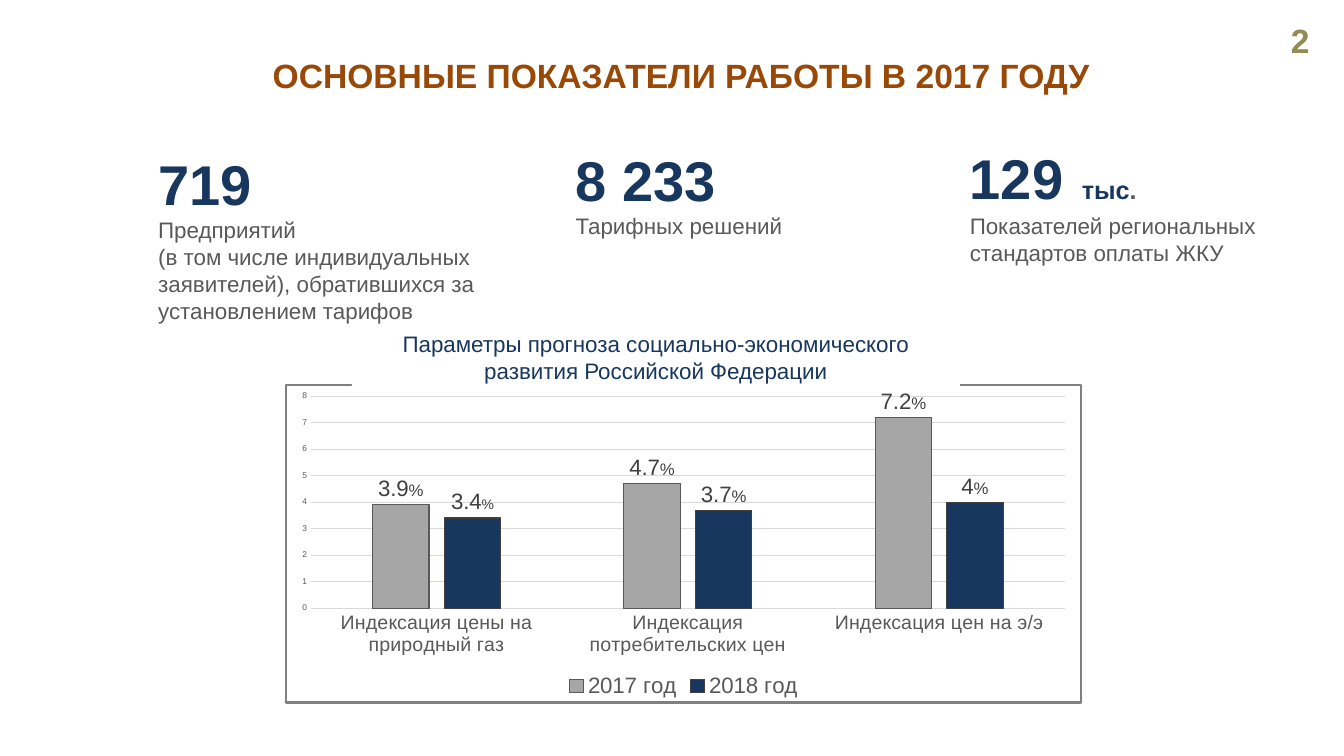
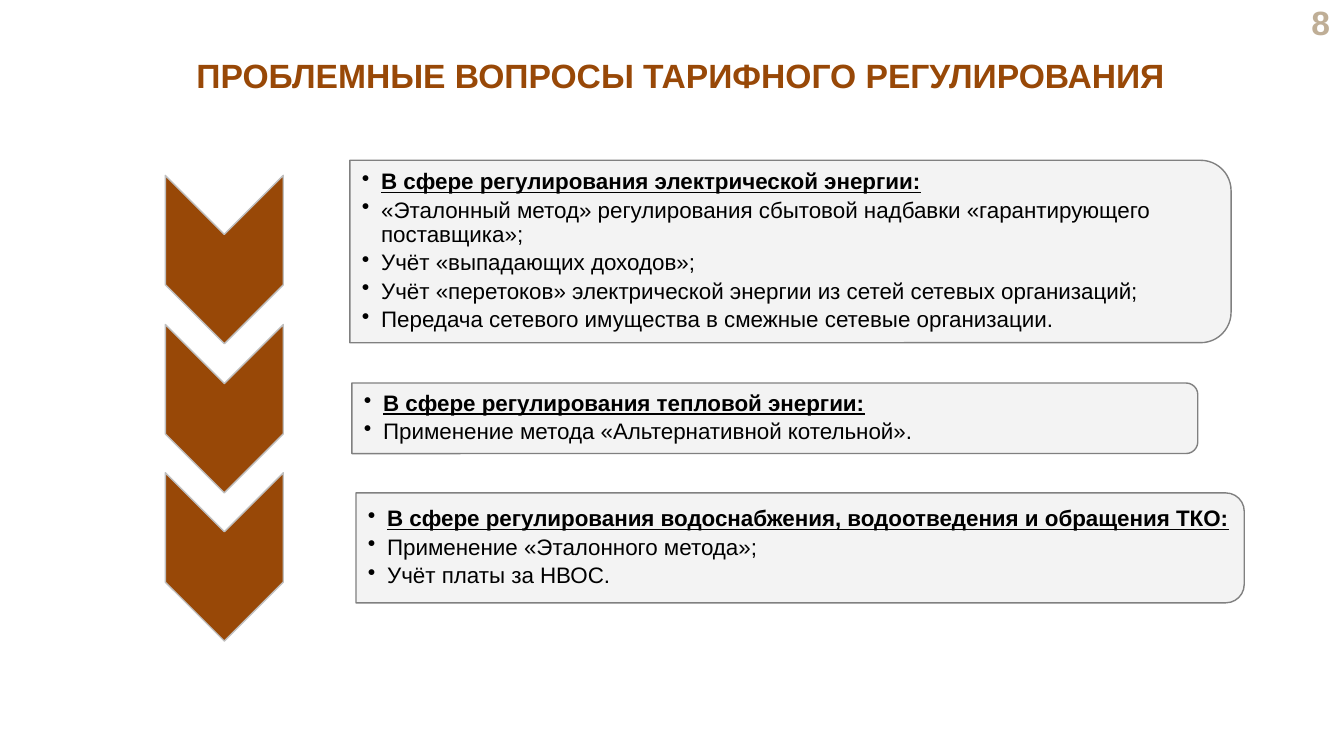
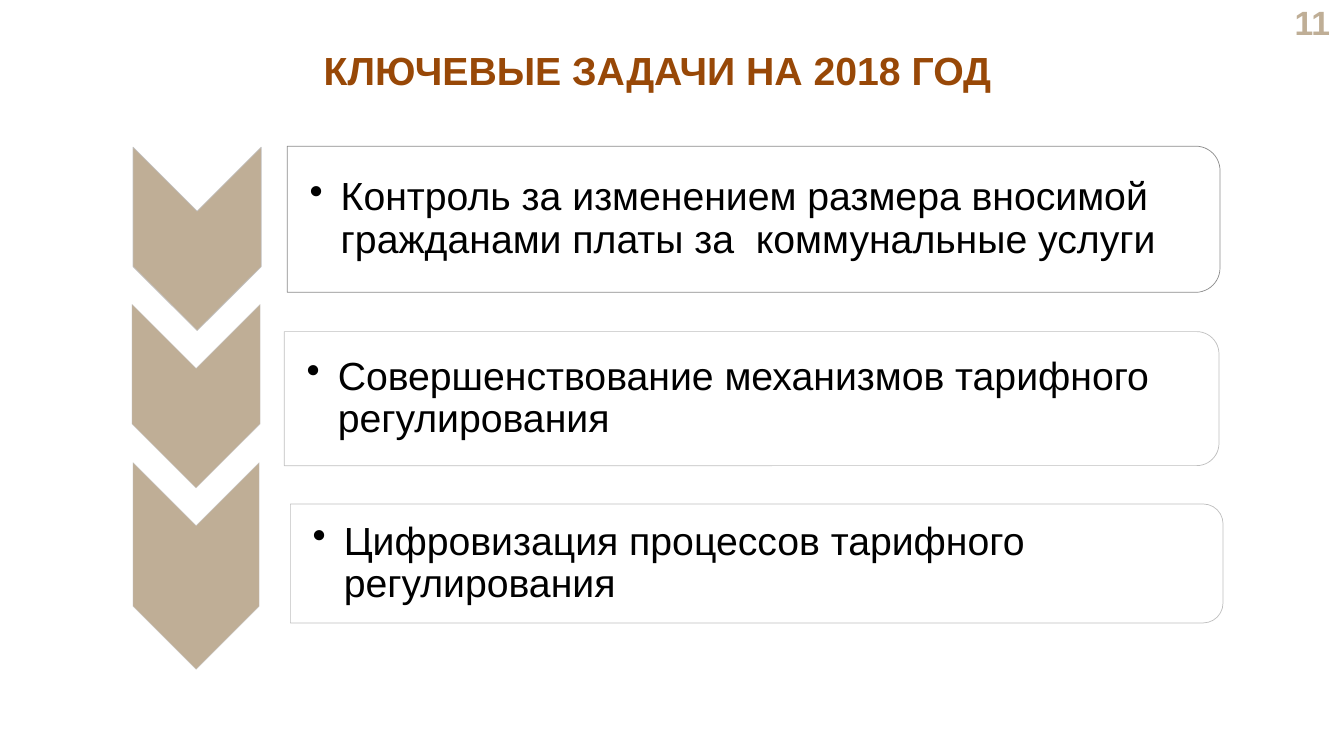
from pptx import Presentation
from pptx.chart.data import CategoryChartData
from pptx.dml.color import RGBColor
from pptx.enum.chart import XL_CHART_TYPE, XL_LABEL_POSITION, XL_LEGEND_POSITION, XL_TICK_MARK
from pptx.enum.shapes import MSO_SHAPE
from pptx.enum.text import MSO_ANCHOR, MSO_AUTO_SIZE, PP_ALIGN
from pptx.oxml import parse_xml
from pptx.oxml.ns import nsdecls, qn
from pptx.oxml.xmlchemy import OxmlElement
from pptx.util import Pt

PX = 9144  # 100 px to the inch
FONT = "Arial"
BROWN, SAND, OLIVE, NAVY = "984807", "BFAE96", "948A54", "17375E"
BLACK, WHITE, PALE = "000000", "FFFFFF", "F2F2F2"
DARK, TEXT_GREY, MID, SILVER, GRID = "404040", "595959", "808080", "BFBFBF", "D9D9D9"


def paint(fill, color, alpha=100):
    fill.solid()
    fill.fore_color.rgb = RGBColor.from_string(color)
    if alpha < 100:
        opacity = OxmlElement("a:alpha")
        opacity.set("val", str(alpha * 1000))
        fill._xPr.find(".//" + qn("a:srgbClr")).append(opacity)


def write(frame, paragraphs, size=16, color=BLACK, bold=False, underline=False,
          align=PP_ALIGN.LEFT, anchor=MSO_ANCHOR.TOP, insets=(10, 5, 10, 5), bullet=0):
    """Each paragraph is a list of (text, overrides of the text format)."""
    frame.word_wrap = True
    frame.auto_size = MSO_AUTO_SIZE.NONE
    frame.vertical_anchor = anchor
    frame.margin_left, frame.margin_top, frame.margin_right, frame.margin_bottom = (
        inset * PX for inset in insets)
    for index, runs in enumerate(paragraphs):
        paragraph = frame.add_paragraph() if index else frame.paragraphs[0]
        paragraph.alignment = align
        if bullet:
            properties = paragraph._p.get_or_add_pPr()
            properties.set("marL", str(bullet * PX))
            properties.set("indent", str(-bullet * PX))
            mark = OxmlElement("a:buChar")
            mark.set("char", "•")
            properties.append(mark)
            paragraph.line_spacing = 0.9
            paragraph.space_after = Pt(3)
        for text, override in runs:
            style = {"size": size, "color": color, "bold": bold, "underline": underline} | override
            run = paragraph.add_run()
            run.text = text
            run.font.name = FONT
            run.font.size = Pt(style["size"])
            run.font.bold = style["bold"]
            run.font.underline = style["underline"]
            paint(run.font.fill, style["color"])


deck = Presentation()
deck.slide_width, deck.slide_height = 1333 * PX, 750 * PX

# Titles
titles = [
    ("ОСНОВНЫЕ ПОКАЗАТЕЛИ РАБОТЫ В 2017 ГОДУ", (157, 49, 1037, 50), 24, PP_ALIGN.CENTER),
    ("ПРОБЛЕМНЫЕ ВОПРОСЫ ТАРИФНОГО РЕГУЛИРОВАНИЯ", (162, 49, 1026, 50), 24, PP_ALIGN.CENTER),
    ("КЛЮЧЕВЫЕ ЗАДАЧИ НА 2018 ГОД", (311, 41, 885, 57), 28, PP_ALIGN.LEFT),
]
for heading, box, size, align in titles:
    slide = deck.slides.add_slide(deck.slide_layouts[5])
    title = slide.shapes.title
    title.left, title.top, title.width, title.height = (v * PX for v in box)
    write(title.text_frame, [[(heading, {})]], size=size, color=BROWN, bold=True, align=align)
indicators, problems, tasks = deck.slides

# Page numbers
pages = [
    (indicators, "2", (1246, 15, 87, 50), OLIVE, PP_ALIGN.CENTER),
    (problems, "8", (1244, 5, 85, 34), SAND, PP_ALIGN.RIGHT),
    (tasks, "11", (1244, 5, 85, 34), SAND, PP_ALIGN.RIGHT),
]
for slide, number, box, color, align in pages:
    page = slide.shapes.add_textbox(*(v * PX for v in box))
    write(page.text_frame, [[(number, {})]], size=24, color=color, bold=True,
          align=align, anchor=MSO_ANCHOR.MIDDLE)

# Key figures
big = {"size": 40, "color": NAVY, "bold": True}
key_figures = [
    ((147, 143, 368, 185), [("719", big)],
     ["Предприятий",
      "(в том числе индивидуальных заявителей), обратившихся за установлением тарифов"]),
    ((561, 139, 304, 110), [("8 233", big)], ["Тарифных решений"]),
    ((952, 126, 308, 145),
     [("129", big), (" ", big | {"size": 48}), ("тыс", big | {"size": 18}),
      (".", {"size": 18, "bold": True})],
     ["Показателей региональных", "стандартов оплаты ЖКУ"]),
]
for box, figure, captions in key_figures:
    key_figure = indicators.shapes.add_textbox(*(v * PX for v in box))
    write(key_figure.text_frame, [figure] + [[(caption, {})] for caption in captions],
          color=TEXT_GREY)

# Forecast chart
forecast = CategoryChartData()
forecast.categories = ["Индексация цены на природный газ", "Индексация потребительских цен",
                       "Индексация цен на э/э"]
forecast.add_series("2017 год", (3.9, 4.7, 7.2))
forecast.add_series("2018 год", (3.4, 3.7, 4))
chart = indicators.shapes.add_chart(XL_CHART_TYPE.COLUMN_CLUSTERED, 283 * PX, 381 * PX,
                                    790 * PX, 317 * PX, forecast).chart
chart.has_title = False
chart.font.name, chart.font.size = FONT, Pt(10)
chart._chartSpace.find(qn("c:txPr")).addprevious(parse_xml(
    f'<c:spPr {nsdecls("c", "a")}><a:noFill/><a:ln w="{Pt(1.5)}"><a:solidFill>'
    f'<a:srgbClr val="{MID}"/></a:solidFill></a:ln></c:spPr>'))

prices, percents = chart.category_axis, chart.value_axis
percents.minimum_scale, percents.maximum_scale, percents.major_unit = 0, 8, 1
percents.format.line.fill.background()
chart.has_legend = True
chart.legend.position = XL_LEGEND_POSITION.BOTTOM
chart.legend.include_in_layout = False
for font, size in ((prices.tick_labels.font, 14), (percents.tick_labels.font, 6),
                   (chart.legend.font, 16)):
    font.name, font.size = FONT, Pt(size)
    paint(font.fill, TEXT_GREY)
for axis in (prices, percents):
    axis.major_tick_mark = axis.minor_tick_mark = XL_TICK_MARK.NONE
for line in (prices.format.line, percents.major_gridlines.format.line):
    paint(line.fill, GRID)
    line.width = Pt(0.75)

plot = chart.plots[0]
plot.gap_width, plot.overlap, plot.vary_by_categories = 219, -27, False
year_styles = [("A6A6A6", TEXT_GREY, (12, 12, 12)), (NAVY, DARK, (10, 12, 12))]
for year, (fill, outline, sign_sizes) in zip(plot.series, year_styles):
    paint(year.format.fill, fill)
    paint(year.format.line.fill, outline)
    year.format.line.width = Pt(0.75)
    for index, (value, sign_size) in enumerate(zip(year.values, sign_sizes)):
        label = year.points[index].data_label
        write(label.text_frame, [[(f"{value:g}", {}), ("%", {"size": sign_size})]],
              color=DARK, align=PP_ALIGN.CENTER)
        label.position = XL_LABEL_POSITION.OUTSIDE_END

# Chart heading, interrupting the frame of the chart
chart_heading = indicators.shapes.add_shape(MSO_SHAPE.RECTANGLE, 349 * PX, 323 * PX,
                                            603 * PX, 64 * PX)
chart_heading.shadow.inherit = False
paint(chart_heading.fill, WHITE)
chart_heading.line.fill.background()
write(chart_heading.text_frame,
      [[("Параметры прогноза социально-экономического развития Российской Федерации", {})]],
      color=NAVY, align=PP_ALIGN.CENTER)

# Chevron lists: boxes as seen after the quarter turn, line opacity, text
header = {"bold": True, "underline": True}
problem_rows = [
    ((164, 174, 117, 167), (347, 159, 874, 181), 100,
     [[("В сфере регулирования электрической энергии:", header)],
      [("«Эталонный метод» регулирования сбытовой надбавки «гарантирующего поставщика»;", {})],
      [("Учёт «выпадающих доходов»;", {})],
      [("Учёт «перетоков» электрической энергии из сетей сетевых организаций;", {})],
      [("Передача сетевого имущества в смежные сетевые организации.", {})]]),
    ((164, 322, 117, 167), (349, 380, 839, 70), 100,
     [[("В сфере регулирования тепловой энергии:", header)],
      [("Применение метода «Альтернативной котельной».", {})]]),
    ((164, 469, 117, 167), (353, 489, 881, 109), 100,
     [[("В сфере регулирования водоснабжения, водоотведения и обращения ТКО:", header)],
      [("Применение «Эталонного метода»;", {})],
      [("Учёт платы за НВОС.", {})]]),
]
task_rows = [
    ((132, 146, 127, 182), (285, 145, 925, 145), 90,
     [[("Контроль за изменением размера вносимой гражданами платы за  коммунальные услуги", {})]]),
    ((131, 302, 127, 182), (282, 329, 927, 133), 50,
     [[("Совершенствование механизмов тарифного регулирования", {})]]),
    ((132, 459, 125, 205), (288, 500, 925, 118), 50,
     [[("Цифровизация процессов тарифного регулирования", {})]]),
]
chevron_lists = [
    (problems, problem_rows, BROWN, PALE, 1, 16, 19, (12, 1, 1, 1)),
    (tasks, task_rows, SAND, WHITE, 0.5, 28, 31, (22, 2, 2, 2)),
]
for slide, rows, chevron_color, panel_color, line_width, size, bullet, insets in chevron_lists:
    for chevron_box, panel_box, line_alpha, paragraphs in rows:
        for kind, box, color, alpha, outline in (
                (MSO_SHAPE.CHEVRON, chevron_box, chevron_color, 100, SILVER),
                (MSO_SHAPE.ROUND_2_SAME_RECTANGLE, panel_box, panel_color, 90, MID)):
            x, y, width, height = (v * PX for v in box)
            turned = slide.shapes.add_shape(kind, x + (width - height) // 2,
                                            y + (height - width) // 2, height, width)
            turned.rotation = 90
            turned.shadow.inherit = False
            paint(turned.fill, color, alpha)
            paint(turned.line.fill, outline, line_alpha)
            turned.line.width = Pt(line_width)
        x, y, width, height = panel_box
        points = slide.shapes.add_textbox(x * PX, y * PX, (width - 5) * PX, height * PX)
        write(points.text_frame, paragraphs, size=size, anchor=MSO_ANCHOR.MIDDLE,
              insets=insets, bullet=bullet)

deck.save("out.pptx")
